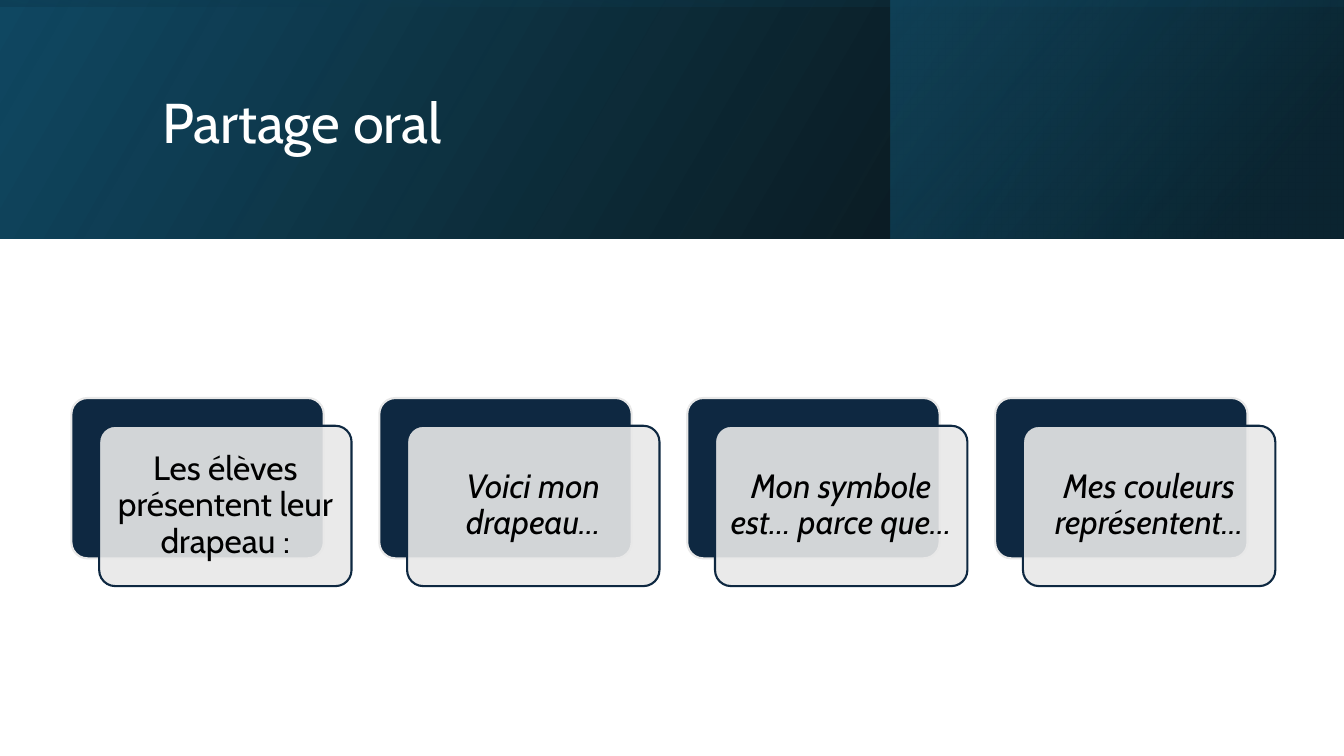
from pptx import Presentation
from pptx.dml.color import RGBColor
from pptx.enum.shapes import MSO_SHAPE as Shape
from pptx.enum.text import MSO_ANCHOR as Anchor, PP_ALIGN as Align
from pptx.oxml.ns import qn
from pptx.util import Cm, Pt

COLORS = {
    "navy": "0E2841",
    "pale": "E8E8E8",
    "petrol": "104862",
    "deep": "0B3041",
    "teal": "156082",
    "black": "000000",
    "white": "FFFFFF",
}
FONT = "Cabin"
SLIDE_W, SLIDE_H = 33.87, 19.05
BANNER_H = 6.02
CARD_W, CARD_H = 6.36, 4.04
CARD_LEFT, CARD_TOP, CARD_STEP = 1.8, 10.03, 7.76
FRONT_SHIFT = 0.7

# Text and whether it is a sentence starter, set in italics
CARDS = [
    ("Les élèves présentent leur drapeau :", False),
    ("Voici mon drapeau…", True),
    ("Mon symbole est… parce que…", True),
    ("Mes couleurs représentent…", True),
]


def rgb(name):
    return RGBColor.from_string(COLORS[name])


def set_alpha(color_element, percent):
    alpha = color_element.makeelement(qn("a:alpha"), {"val": str(percent * 1000)})
    color_element.append(alpha)


def add_gradient_panel(slide, left, top, width, height, stops, angle, rotation=0):
    """Add a mirrored panel; stops are (position %, colour, opacity %)."""
    panel = slide.shapes.add_shape(
        Shape.RECTANGLE, Cm(left), Cm(top), Cm(width), Cm(height))
    panel.shadow.inherit = False
    panel.line.fill.background()
    panel.rotation = rotation
    properties = panel._element.spPr
    properties.find(qn("a:xfrm")).set("flipH", "1")
    panel.fill.gradient()
    panel.fill.gradient_angle = 360 - angle
    for stop, (position, color, _) in zip(panel.fill.gradient_stops, stops):
        stop.position = position / 100
        stop.color.rgb = rgb(color)
    for element, (_, _, opacity) in zip(properties.iter(qn("a:srgbClr")), stops):
        set_alpha(element, opacity)


def format_text(frame, size, color, align, italic=False):
    frame.word_wrap = True
    frame.vertical_anchor = Anchor.MIDDLE
    paragraph = frame.paragraphs[0]
    paragraph.alignment = align
    paragraph.line_spacing = 0.9
    font = paragraph.runs[0].font
    font.name = FONT
    font.size = Pt(size)
    font.italic = italic
    font.color.rgb = rgb(color)


def add_title(slide, text):
    title = slide.shapes.add_textbox(Cm(3.84), Cm(0.97), Cm(27), Cm(4.37))
    title.text_frame.text = text
    format_text(title.text_frame, 40, "white", Align.LEFT)


def add_plate(slide, left, top, fill, outline):
    plate = slide.shapes.add_shape(
        Shape.ROUNDED_RECTANGLE, Cm(left), Cm(top), Cm(CARD_W), Cm(CARD_H))
    plate.shadow.inherit = False
    plate.adjustments[0] = 0.1
    plate.fill.solid()
    plate.fill.fore_color.rgb = rgb(fill)
    plate.line.color.rgb = rgb(outline)
    plate.line.width = Pt(1.5)
    return plate


def add_card(slide, left, text, italic):
    add_plate(slide, left, CARD_TOP, "navy", "pale")
    front = add_plate(
        slide, left + FRONT_SHIFT, CARD_TOP + FRONT_SHIFT, "pale", "navy")
    set_alpha(next(front._element.spPr.iter(qn("a:srgbClr"))), 90)
    frame = front.text_frame
    frame.margin_left = frame.margin_right = Cm(0.25)
    frame.margin_top = frame.margin_bottom = Cm(0.25)
    frame.text = text
    format_text(frame, 24, "black", Align.CENTER, italic)


def add_banner(slide):
    add_gradient_panel(slide, 0, 0, SLIDE_W, BANNER_H,
                       [(0, "black", 96), (100, "petrol", 100)], 330)
    add_gradient_panel(slide, 22.45, 0, 11.4, BANNER_H,
                       [(19, "deep", 68), (100, "teal", 48)], 320)
    # A quarter turn lays this upright panel across the banner
    inset = (SLIDE_W - BANNER_H) / 2
    add_gradient_panel(slide, inset, -inset, BANNER_H, SLIDE_W,
                       [(23, "petrol", 16), (99, "black", 45)], 350, rotation=270)


def main():
    deck = Presentation()
    deck.slide_width, deck.slide_height = Cm(SLIDE_W), Cm(SLIDE_H)
    slide = deck.slides.add_slide(deck.slide_layouts[6])
    add_banner(slide)
    add_title(slide, "Partage oral")
    for index, (text, italic) in enumerate(CARDS):
        add_card(slide, CARD_LEFT + index * CARD_STEP, text, italic)
    deck.save("out.pptx")


if __name__ == "__main__":
    main()
